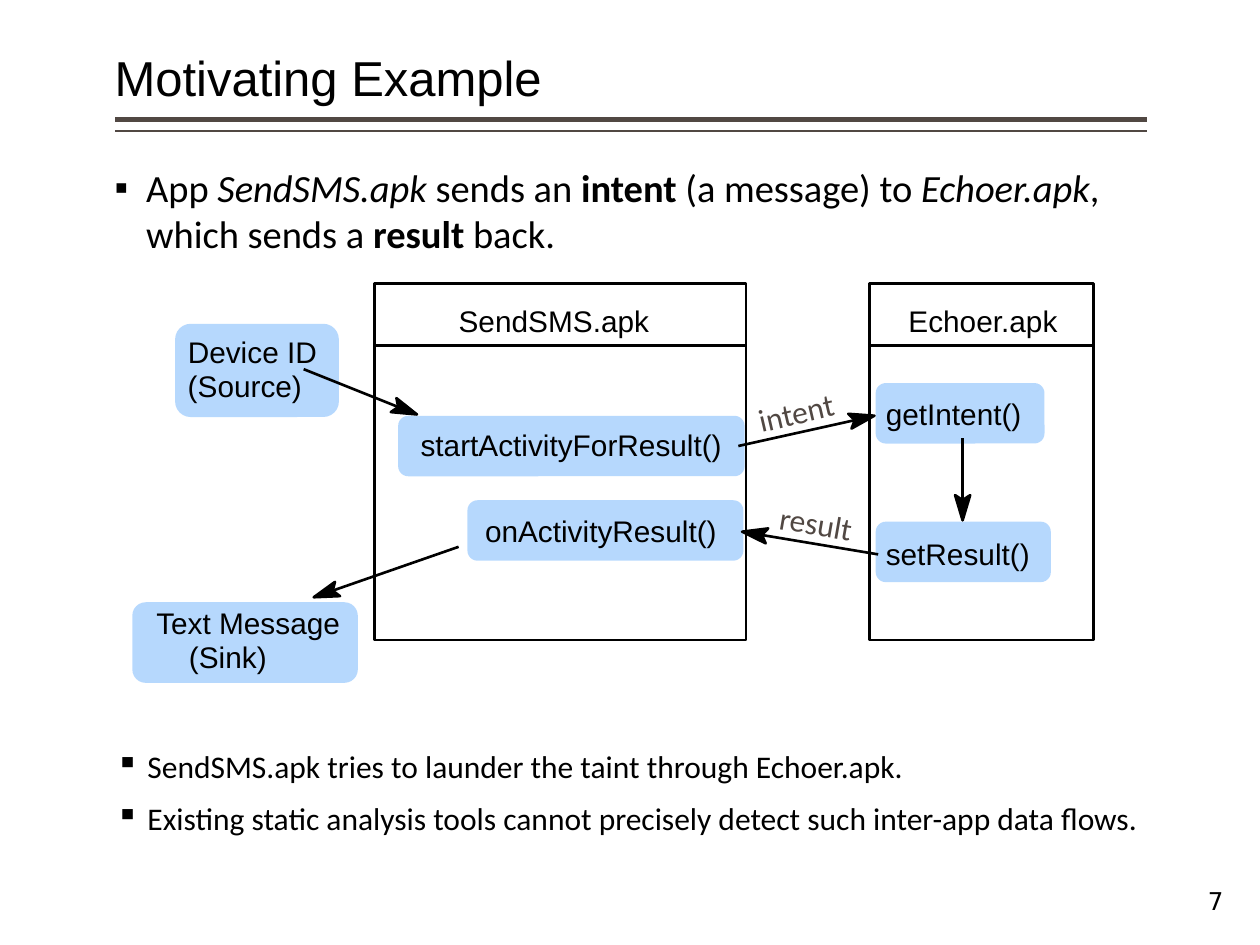
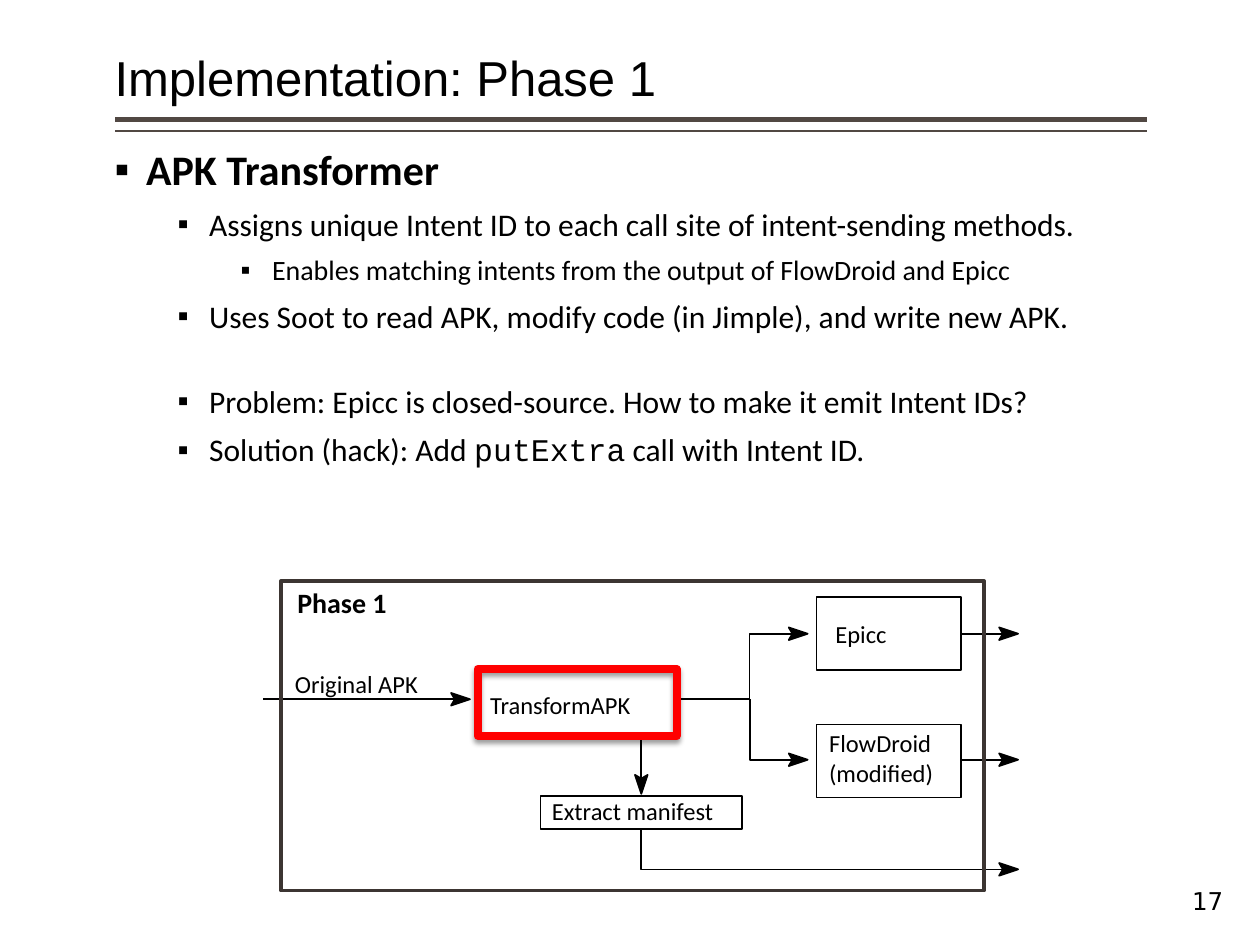
from dataclasses import dataclass
from math import hypot
from typing import Optional

from lxml.etree import SubElement
from pptx import Presentation
from pptx.dml.color import RGBColor
from pptx.enum.shapes import MSO_CONNECTOR as Connector, MSO_SHAPE as Shape
from pptx.enum.text import MSO_ANCHOR as Anchor, MSO_AUTO_SIZE as AutoSize, PP_ALIGN as Align
from pptx.oxml.ns import qn
from pptx.util import Pt

EMU_PER_PX = 9144
BLACK, RULE, PHASE_EDGE = "000000", "514843", "3C3532"
NODE_FILL, HIGHLIGHT = "6FB3FD", "FF0000"
HEADING_FONT, BODY_FONT, CODE_FONT, NUMBER_FONT = "Arial", "Calibri", "Courier New", "DejaVu Sans"


@dataclass(frozen=True)
class Box:
    x: int
    y: int
    w: int
    h: int


@dataclass(frozen=True)
class Span:
    text: str
    bold: bool = False
    italic: bool = False
    font: str = BODY_FONT


@dataclass(frozen=True)
class Bullet:
    spans: list[Span]
    size: int = 18
    level: int = 0
    before: int = 6
    after: int = 0


@dataclass(frozen=True)
class Label:
    text: str
    box: Box
    centered: bool = False
    size: int = 14
    font: str = BODY_FONT
    color: str = BLACK
    bold: bool = False
    rotation: float = 0


@dataclass(frozen=True)
class ArrowStyle:
    width: float
    head_length: int
    head_half: int


FLOW_ARROW = ArrowStyle(1.5, 20, 6)
PIPELINE_ARROW = ArrowStyle(1, 15, 5)


def px(length: float) -> int:
    return round(length * EMU_PER_PX)


def rgb(color: str) -> RGBColor:
    return RGBColor.from_string(color)


def place(box: Box) -> tuple[int, ...]:
    return tuple(px(length) for length in (box.x, box.y, box.w, box.h))


def write(paragraph, text: str, *, size: int, font: str = BODY_FONT, color: str = BLACK,
          bold: bool = False, italic: bool = False) -> None:
    run = paragraph.add_run()
    run.text = text
    run.font.size, run.font.name = Pt(size), font
    run.font.bold, run.font.italic = bold, italic
    run.font.color.rgb = rgb(color)


def prepare_frame(frame, anchor: Anchor = Anchor.TOP, inset: int = 5) -> None:
    frame.word_wrap = True
    frame.auto_size = AutoSize.NONE
    frame.vertical_anchor = anchor
    frame.margin_left = frame.margin_right = 0
    frame.margin_top = frame.margin_bottom = px(inset)


def move(placeholder, box: Box) -> None:
    placeholder.left, placeholder.top, placeholder.width, placeholder.height = place(box)


def add_bullets(frame, bullets: list[Bullet]) -> None:
    prepare_frame(frame)
    for index, bullet in enumerate(bullets):
        paragraph = frame.add_paragraph() if index else frame.paragraphs[0]
        paragraph.level = bullet.level
        paragraph.alignment = Align.LEFT
        paragraph.space_before, paragraph.space_after = Pt(bullet.before), Pt(bullet.after)
        properties = paragraph._p.get_or_add_pPr()
        properties.set("marL", str(px(25 + 50 * bullet.level)))
        properties.set("indent", str(px(-25)))
        SubElement(properties, qn("a:buChar")).set("char", "▪")
        for span in bullet.spans:
            write(paragraph, span.text, size=bullet.size, font=span.font,
                  bold=span.bold, italic=span.italic)


def add_label(slide, label: Label) -> None:
    holder = slide.shapes.add_textbox(*place(label.box))
    holder.rotation = label.rotation
    frame = holder.text_frame
    prepare_frame(frame, inset=0)
    for index, line in enumerate(label.text.split("\n")):
        paragraph = frame.add_paragraph() if index else frame.paragraphs[0]
        paragraph.alignment = Align.CENTER if label.centered else Align.LEFT
        write(paragraph, line, size=label.size, font=label.font,
              color=label.color, bold=label.bold)


def add_outline(slide, box: Box, color: str = BLACK, width: float = 1.0):
    outline = slide.shapes.add_shape(Shape.RECTANGLE, *place(box))
    outline.shadow.inherit = False
    outline.fill.background()
    outline.line.color.rgb = rgb(color)
    outline.line.width = Pt(width)
    return outline


def add_node(slide, box: Box) -> None:
    node = slide.shapes.add_shape(Shape.ROUNDED_RECTANGLE, *place(box))
    node.shadow.inherit = False
    node.fill.solid()
    node.fill.fore_color.rgb = rgb(NODE_FILL)
    node.line.fill.background()
    tint = node._element.spPr.find(qn("a:solidFill")).find(qn("a:srgbClr"))
    SubElement(tint, qn("a:alpha")).set("val", "50000")


def add_line(slide, start, end, color: str = BLACK, width: float = 1.0) -> None:
    line = slide.shapes.add_connector(
        Connector.STRAIGHT, *(px(value) for value in (*start, *end)))
    line.line.color.rgb = rgb(color)
    line.line.width = Pt(width)
    SubElement(line._element.spPr, qn("a:effectLst"))


def add_path(slide, points, width: float, fill: Optional[str] = None) -> None:
    corners = [(px(x), px(y)) for x, y in points]
    builder = slide.shapes.build_freeform(*corners[0])
    builder.add_line_segments(corners[1:], close=fill is not None)
    path = builder.convert_to_shape()
    path.shadow.inherit = False
    if fill:
        path.fill.solid()
        path.fill.fore_color.rgb = rgb(fill)
    else:
        path.fill.background()
    path.line.color.rgb = rgb(BLACK)
    path.line.width = Pt(width)


def add_arrow(slide, route, style: ArrowStyle) -> None:
    (from_x, from_y), (tip_x, tip_y) = route[-2:]
    distance = hypot(tip_x - from_x, tip_y - from_y)
    ux, uy = (tip_x - from_x) / distance, (tip_y - from_y) / distance

    def behind(back: float, side: float = 0) -> tuple[float, float]:
        return tip_x - ux * back - uy * side, tip_y - uy * back + ux * side

    length, half = style.head_length, style.head_half
    shaft = [*route[:-1], behind(length / 2)]
    if len(shaft) == 2:
        add_line(slide, *shaft, width=style.width)
    else:
        add_path(slide, shaft, style.width)
    head = [behind(length, half), (tip_x, tip_y), behind(length, -half), behind(length * 0.8)]
    add_path(slide, head, style.width, BLACK)


def add_content_slide(deck, title: str, number: int, body_box: Box, bullets: list[Bullet]):
    slide = deck.slides.add_slide(deck.slide_layouts[1])
    heading, body = slide.shapes.title, slide.placeholders[1]
    move(heading, Box(91, 6, 819, 84))
    prepare_frame(heading.text_frame, Anchor.BOTTOM)
    paragraph = heading.text_frame.paragraphs[0]
    paragraph.alignment, paragraph.line_spacing = Align.LEFT, 0.9
    write(paragraph, title, size=28, font=HEADING_FONT)
    move(body, body_box)
    add_bullets(body.text_frame, bullets)
    for y, width in ((95, 3), (104, 1)):
        add_line(slide, (910, y), (91, y), RULE, width)
    page = slide.shapes.add_textbox(*place(Box(821, 695, 150, 40))).text_frame
    prepare_frame(page, Anchor.MIDDLE)
    page.paragraphs[0].alignment = Align.RIGHT
    write(page.paragraphs[0], str(number), size=14, font=NUMBER_FONT)
    return slide


def build_motivating_example(deck) -> None:
    slide = add_content_slide(deck, "Motivating Example", 7, Box(91, 125, 848, 53), [
        Bullet([Span("App "), Span("SendSMS.apk", italic=True), Span(" sends an "),
                Span("intent", bold=True), Span(" (a message) to "),
                Span("Echoer.apk", italic=True), Span(", which sends a "),
                Span("result", bold=True), Span(" back.")], size=22, before=18)])
    conclusions = slide.shapes.add_textbox(*place(Box(92, 588, 848, 108)))
    add_bullets(conclusions.text_frame, [Bullet([Span(text)], before=8) for text in (
        "SendSMS.apk tries to launder the taint through Echoer.apk.",
        "Existing static analysis tools cannot precisely detect such inter-app data flows.")])

    for node in (Box(139, 257, 130, 74), Box(316, 330, 275, 48), Box(695, 304, 134, 48),
                 Box(695, 414, 139, 48), Box(371, 397, 219, 48), Box(105, 478, 179, 64)):
        add_node(slide, node)
    for route in ([(586, 354), (694, 330)], [(697, 440), (589, 422)], [(764, 348), (764, 413)],
                  [(241, 293), (331, 329)], [(364, 434), (249, 474)]):
        add_arrow(slide, route, FLOW_ARROW)
    for x, w in ((690, 178), (297, 295)):
        for y, h in ((225, 49), (274, 234)):
            add_outline(slide, Box(x, y, w, h), width=1.5)
    for text, box, centered in (
            ("setResult()", Box(703, 425, 132, 34), False),
            ("getIntent()", Box(703, 314, 125, 34), False),
            ("onActivityResult()", Box(382, 407, 190, 29), True),
            ("Echoer.apk", Box(721, 240, 138, 34), False),
            ("Device ID", Box(149, 265, 119, 34), False),
            ("(Source)", Box(149, 292, 107, 34), False),
            ("SendSMS.apk", Box(364, 240, 171, 34), False),
            ("Text Message", Box(124, 480, 168, 34), False),
            ("startActivityForResult()", Box(331, 339, 245, 29), True),
            ("(Sink)", Box(150, 507, 90, 34), False)):
        add_label(slide, Label(text, box, centered, size=17, font=HEADING_FONT))
    for text, box, rotation in (("intent", Box(601, 311, 68, 27), 346.9),
                                ("result", Box(619, 401, 68, 27), 9.9)):
        add_label(slide, Label(text, box, size=18, color=RULE, rotation=rotation))


def add_highlight(slide, box: Box) -> None:
    highlight = add_outline(slide, box, HIGHLIGHT, 4.5)
    effects = highlight._element.spPr.find(qn("a:effectLst"))
    shadow = SubElement(effects, qn("a:outerShdw"), blurRad=str(Pt(3.1)),
                        dist=str(Pt(2)), dir="5400000", rotWithShape="0")
    shade = SubElement(shadow, qn("a:srgbClr"), val=BLACK)
    SubElement(shade, qn("a:alpha"), val="38000")


def build_phase_one(deck) -> None:
    slide = add_content_slide(deck, "Implementation: Phase 1", 17, Box(91, 109, 860, 344), [
        Bullet([Span("APK Transformer", bold=True)], size=24, before=18),
        Bullet([Span("Assigns unique Intent ID to each call site of intent-sending methods.")],
               level=1),
        Bullet([Span("Enables matching intents from the output of FlowDroid and Epicc")],
               size=16, level=2),
        Bullet([Span("Uses Soot to read APK, modify code (in Jimple), and write new APK.")],
               level=1, after=21),
        Bullet([Span("Problem: Epicc is closed-source. How to make it emit Intent IDs?")], level=1),
        Bullet([Span("Solution (hack): Add "), Span("putExtra", font=CODE_FONT),
                Span(" call with Intent ID.")], level=1)])

    transform = Box(379, 531, 158, 53)
    for step in (transform, Box(648, 575, 115, 58), Box(648, 474, 115, 58),
                 Box(429, 632, 160, 26)):
        add_outline(slide, step)
    for route in ([(538, 555), (595, 555), (595, 503), (641, 503)],
                  [(595, 555), (595, 603), (641, 603)],
                  [(763, 503), (808, 503)], [(763, 603), (808, 603)],
                  [(209, 555), (373, 555)], [(509, 584), (509, 630)],
                  [(509, 658), (509, 690), (808, 690)]):
        add_arrow(slide, route, PIPELINE_ARROW)
    add_outline(slide, Box(223, 461, 558, 246), PHASE_EDGE, 2)
    for text, box in (("TransformAPK", Box(389, 548, 144, 30)),
                      ("FlowDroid\n(modified)", Box(658, 578, 107, 60)),
                      ("Epicc", Box(663, 491, 52, 30)),
                      ("Original APK", Box(234, 531, 126, 30)),
                      ("Extract manifest", Box(438, 632, 166, 30))):
        add_label(slide, Label(text, box))
    add_label(slide, Label("Phase 1", Box(236, 465, 80, 27), size=16, bold=True))
    add_highlight(slide, transform)


def main() -> None:
    deck = Presentation()
    deck.slide_width, deck.slide_height = px(1000), px(750)
    build_motivating_example(deck)
    build_phase_one(deck)
    deck.save("out.pptx")


if __name__ == "__main__":
    main()
